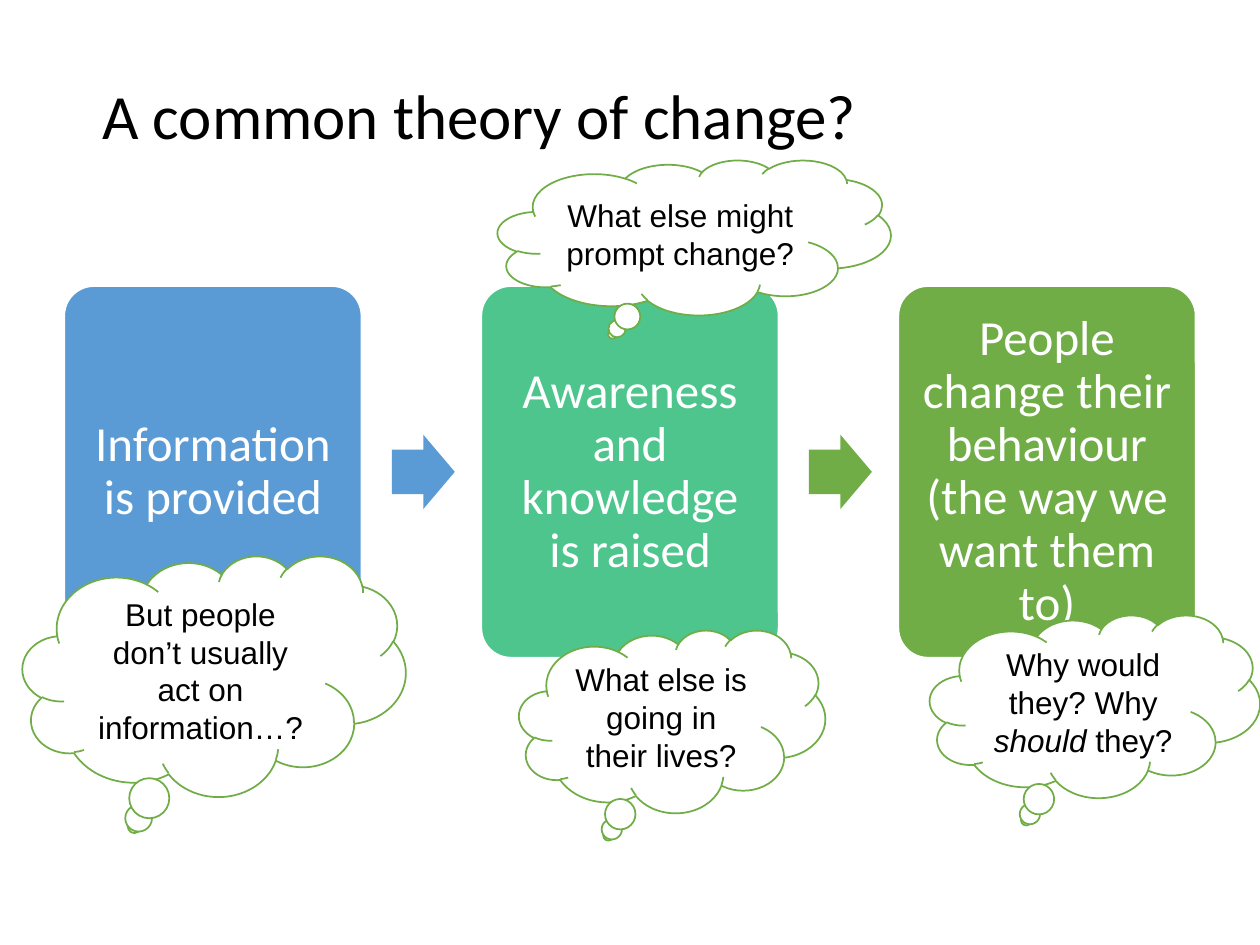
"""Build a slide questioning a three-step theory of change."""
from pptx import Presentation
from pptx.dml.color import RGBColor
from pptx.enum.shapes import MSO_SHAPE
from pptx.enum.text import MSO_ANCHOR, PP_ALIGN
from pptx.util import Inches, Pt

COLORS = {
    "black": "000000",
    "white": "FFFFFF",
    "blue": "5B9BD5",
    "teal": "4DC58D",
    "green": "70AD47",
}


def add_text(para, text, font="Arial", size=18, color="black", italic=False):
    span = para.add_run()
    span.text = text
    span.font.name = font
    span.font.size = Pt(size)
    span.font.italic = italic
    span.font.color.rgb = RGBColor.from_string(COLORS[color])


def add_block(kind, left, top, width, height, fill, line=None):
    block = page.shapes.add_shape(
        kind, Inches(left), Inches(top), Inches(width), Inches(height))
    block.shadow.inherit = False
    block.fill.solid()
    block.fill.fore_color.rgb = RGBColor.from_string(COLORS[fill])
    if line:
        block.line.color.rgb = RGBColor.from_string(COLORS[line])
        block.line.width = Pt(1)
    else:
        block.line.fill.background()
    block.text_frame.word_wrap = True
    block.text_frame.vertical_anchor = MSO_ANCHOR.MIDDLE
    block.text_frame.paragraphs[0].alignment = PP_ALIGN.CENTER
    return block


deck = Presentation()
deck.slide_width, deck.slide_height = Inches(10), Inches(7.5)
page = deck.slides.add_slide(deck.slide_layouts[5])

title = page.shapes.title
title.left, title.top = Inches(0.71), Inches(0.4)
title.width, title.height = Inches(8.6), Inches(1.09)
title.text_frame.vertical_anchor = MSO_ANCHOR.MIDDLE
title_para = title.text_frame.paragraphs[0]
title_para.alignment = PP_ALIGN.LEFT
title_para.line_spacing = 0.9
add_text(title_para, "A common theory of change?", font="Calibri", size=36)

steps = [
    ("Information is provided", "blue", "blue"),
    ("Awareness and knowledge is raised", "teal", "green"),
    ("People change their behaviour (the way we want them to)", "green", None),
]
for index, (text, fill, arrow_fill) in enumerate(steps):
    left = 0.51 + 3.31 * index
    step = add_block(MSO_SHAPE.ROUNDED_RECTANGLE, left, 2.27, 2.36, 2.95, fill, "white")
    step.adjustments[0] = 0.1
    frame = step.text_frame
    frame.margin_left = frame.margin_right = Inches(0.12)
    frame.margin_top = frame.margin_bottom = Inches(0.12)
    frame.paragraphs[0].line_spacing = 0.9
    add_text(frame.paragraphs[0], text, font="Calibri", size=28, color="white")
    if arrow_fill:
        arrow = add_block(MSO_SHAPE.RIGHT_ARROW, left + 2.6, 3.45, 0.5, 0.59, arrow_fill)
        arrow.adjustments[0] = 0.6
        arrow.adjustments[1] = 0.5

doubts = [
    (7.38, 4.88, 2.62, 1.45, ["Why would they? Why ", "should", " they?"]),
    (0.18, 4.41, 3.04, 1.91, ["But people don’t usually act on information…?"]),
    (4.12, 5, 2.43, 1.45, ["What else is going in their lives?"]),
    (3.95, 1.27, 3.12, 1.23, ["What else might prompt change?"]),
]
for left, top, width, height, parts in doubts:
    cloud = add_block(MSO_SHAPE.CLOUD_CALLOUT, left, top, width, height, "white", "green")
    for part in parts:
        add_text(cloud.text_frame.paragraphs[0], part, italic=part == "should")

deck.save("out.pptx")
